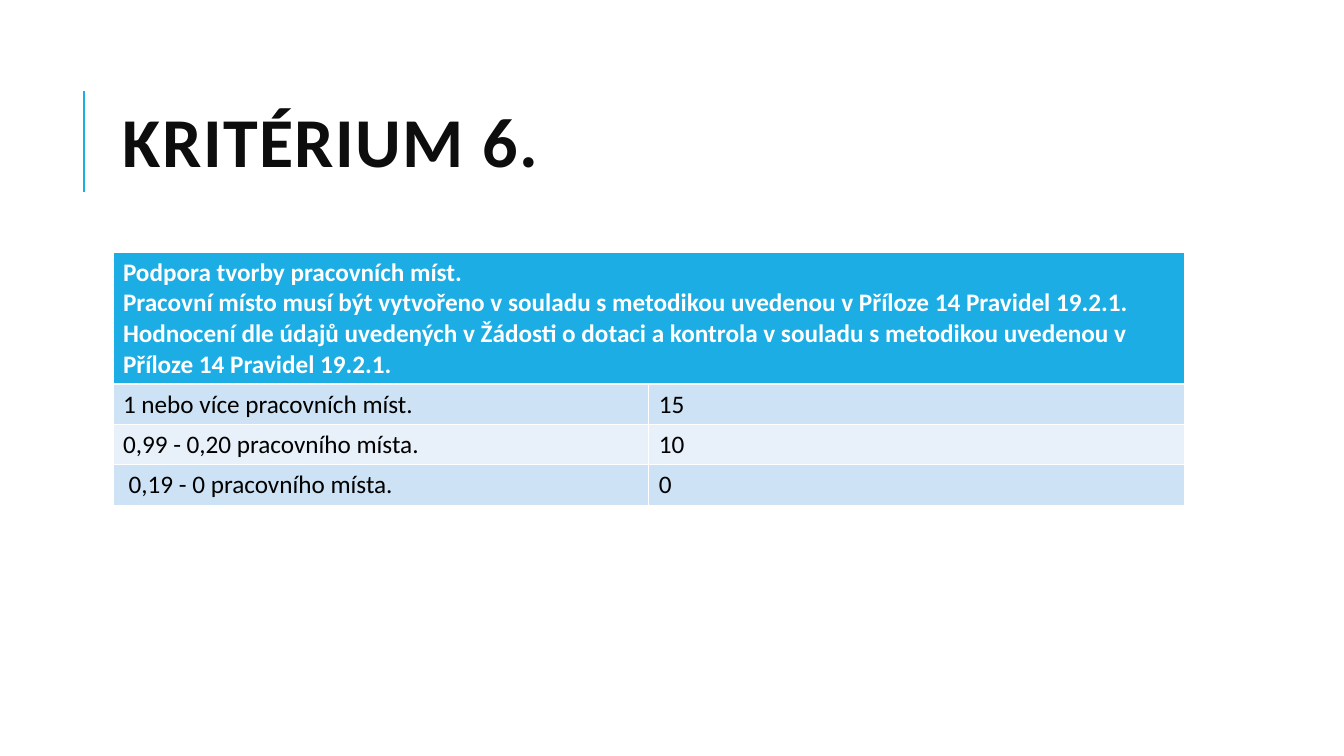
from dataclasses import dataclass

from pptx import Presentation
from pptx.dml.color import RGBColor
from pptx.enum.shapes import MSO_CONNECTOR
from pptx.enum.text import MSO_ANCHOR
from pptx.oxml.ns import qn
from pptx.util import Inches, Pt
from lxml.etree import SubElement


@dataclass(frozen=True)
class Theme:
    """Colours, font and type sizes of the slide."""
    font: str = "Calibri"
    accent: str = "1CADE4"
    title: str = "0D0D0D"
    heading: str = "FFFFFF"
    body: str = "000000"
    bands: tuple = ("CDE3F5", "E8F1FA")
    title_size: int = 50
    table_size: int = 18
    rule_width: float = 1.5


THEME = Theme()
TITLE = "KRITÉRIUM 6."
HEADING = (
    "Podpora tvorby pracovních míst.\n"
    "Pracovní místo musí být vytvořeno v souladu s metodikou uvedenou v Příloze 14 Pravidel 19.2.1.\n"
    "Hodnocení dle údajů uvedených v Žádosti o dotaci a kontrola v souladu s metodikou uvedenou v "
    "Příloze 14 Pravidel 19.2.1."
)
SCORES = [
    ("1 nebo více pracovních míst.", "15"),
    ("0,99 - 0,20 pracovního místa.", "10"),
    (" 0,19 - 0 pracovního místa.", "0"),
]


def style_paragraph(paragraph, size, color, bold):
    """Set the font of a whole paragraph."""
    font = paragraph.font
    font.name, font.size, font.bold = THEME.font, Pt(size), bold
    font.color.rgb = RGBColor.from_string(color)


def fill_cell(cell, text, fill, color, bold=False):
    """Write text into a cell and colour it."""
    cell.text = text
    cell.fill.solid()
    cell.fill.fore_color.rgb = RGBColor.from_string(fill)
    for paragraph in cell.text_frame.paragraphs:
        style_paragraph(paragraph, THEME.table_size, color, bold)


def add_title(slide, left, top, width, height):
    """Place the title with the accent rule beside it."""
    rule_left, rule_top = left - Inches(0.29), top + Inches(0.26)
    rule = slide.shapes.add_connector(
        MSO_CONNECTOR.STRAIGHT, rule_left, rule_top + Inches(1), rule_left, rule_top)
    rule.line.color.rgb = RGBColor.from_string(THEME.accent)
    rule.line.width = Pt(THEME.rule_width)
    SubElement(rule._element.spPr, qn("a:effectLst"))

    frame = slide.shapes.add_textbox(left, top, width, height).text_frame
    frame.word_wrap = True
    frame.vertical_anchor = MSO_ANCHOR.MIDDLE
    paragraph = frame.paragraphs[0]
    paragraph.line_spacing = 0.8
    run = paragraph.add_run()
    run.text = TITLE
    run._r.get_or_add_rPr().set("spc", "100")
    style_paragraph(paragraph, THEME.title_size, THEME.title, True)


def add_score_table(slide, left, top, width, heading_height, row_height):
    """Place the criterion heading above its banded score rows."""
    height = heading_height + row_height * len(SCORES)
    table = slide.shapes.add_table(len(SCORES) + 1, 2, left, top, width, height).table
    table.rows[0].height = heading_height
    table.cell(0, 0).merge(table.cell(0, 1))
    fill_cell(table.cell(0, 0), HEADING, THEME.accent, THEME.heading, True)
    for row, score in enumerate(SCORES, 1):
        table.rows[row].height = row_height
        band = THEME.bands[(row - 1) % len(THEME.bands)]
        for column, text in enumerate(score):
            fill_cell(table.cell(row, column), text, band, THEME.body)


def main():
    """Build and save the slide."""
    presentation = Presentation()
    presentation.slide_width, presentation.slide_height = Inches(13.33), Inches(7.5)
    slide = presentation.slides.add_slide(presentation.slide_layouts[6])
    left, width = Inches(1.12), Inches(10.63)
    add_title(slide, left, Inches(0.64), width, Inches(1.64))
    add_score_table(slide, left, Inches(2.5), width, Inches(1.31), Inches(0.4))
    presentation.save("out.pptx")


if __name__ == "__main__":
    main()
